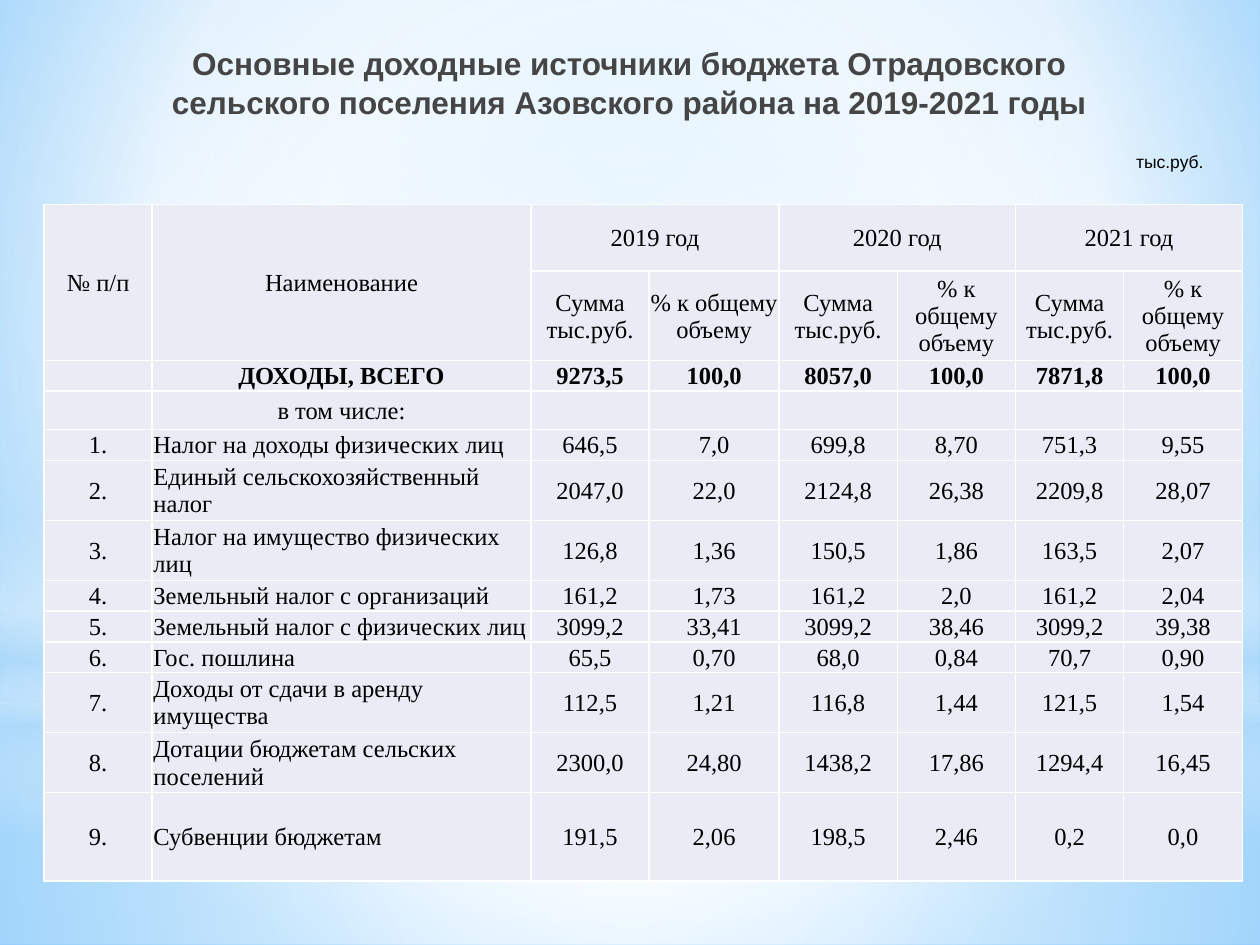
import lxml.etree
import pptx
import pptx.dml.color
import pptx.enum.shapes
import pptx.enum.text
import pptx.oxml
import pptx.oxml.ns
import pptx.util

Pt = pptx.util.Pt
ALIGN = pptx.enum.text.PP_ALIGN
ANCHOR = pptx.enum.text.MSO_ANCHOR
SHAPE = pptx.enum.shapes.MSO_SHAPE
NAMESPACE = pptx.oxml.ns.nsdecls("a")

COLUMN_WIDTHS = [61.8, 216.4, 67.6, 74.2, 67.6, 67.6, 61.8, 67.9]
ROW_HEIGHTS = [38, 50.5, 17.5, 22, 17.5, 34, 34, 17.5, 17.5, 17.5, 34, 34, 50.4]
YEARS = ["2019 год", "2020 год", "2021 год"]
TOTALS = ["", "ДОХОДЫ, ВСЕГО", "9273,5", "100,0", "8057,0", "100,0", "7871,8", "100,0"]
INCOME = [
    ["Налог на доходы физических лиц", "646,5", "7,0", "699,8", "8,70", "751,3", "9,55"],
    ["Единый сельскохозяйственный налог", "2047,0", "22,0", "2124,8", "26,38", "2209,8", "28,07"],
    ["Налог на имущество физических лиц", "126,8", "1,36", "150,5", "1,86", "163,5", "2,07"],
    ["Земельный налог с организаций", "161,2", "1,73", "161,2", "2,0", "161,2", "2,04"],
    ["Земельный налог с физических лиц", "3099,2", "33,41", "3099,2", "38,46", "3099,2", "39,38"],
    ["Гос. пошлина", "65,5", "0,70", "68,0", "0,84", "70,7", "0,90"],
    ["Доходы от сдачи в аренду имущества", "112,5", "1,21", "116,8", "1,44", "121,5", "1,54"],
    ["Дотации бюджетам сельских поселений", "2300,0", "24,80", "1438,2", "17,86", "1294,4", "16,45"],
    ["Субвенции бюджетам", "191,5", "2,06", "198,5", "2,46", "0,2", "0,0"],
]


def color(value):
    return pptx.dml.color.RGBColor.from_string(value)


def write_text(frame, text, font="Arial", size=14, fill="000000", bold=False,
               align=ALIGN.CENTER, spacing=None):
    paragraph = frame.paragraphs[0]
    paragraph.alignment = align
    paragraph.line_spacing = spacing
    if not text:
        paragraph._p.append(pptx.oxml.parse_xml(
            f'<a:endParaRPr {NAMESPACE} sz="{size * 100}"/>'))
        return
    run = paragraph.add_run()
    run.text = text
    run.font.name = font
    run.font.size = Pt(size)
    run.font.bold = bold
    run.font.color.rgb = color(fill)


def gradient(stops, center=None, angle=90):
    items = "".join(
        f'<a:gs pos="{position * 1000}"><a:srgbClr val="{color(value)}">'
        f'<a:alpha val="{opacity * 1000}"/></a:srgbClr></a:gs>'
        for position, value, opacity in stops)
    if center:
        left, top, right, bottom = (edge * 1000 for edge in center)
        direction = (f'<a:path path="circle"><a:fillToRect l="{left}" t="{top}" '
                     f'r="{right}" b="{bottom}"/></a:path>')
    else:
        direction = f'<a:lin ang="{angle * 60000}" scaled="0"/>'
    return pptx.oxml.parse_xml(
        f'<a:gradFill {NAMESPACE} rotWithShape="1"><a:gsLst>{items}</a:gsLst>'
        f'{direction}</a:gradFill>')


def swap_fill(solid, replacement):
    solid.getparent().replace(solid, replacement)


class BudgetSlide:
    font = "Times New Roman"
    cell_fill = "E9EBF5"
    border = "FFFFFF"
    title_color = "454545"

    def __init__(self, presentation):
        self.slide = presentation.slides.add_slide(presentation.slide_layouts[5])

    def background(self, stops, center):
        self.slide.background.fill.solid()
        solid = self.slide.element.xpath("./p:cSld/p:bg/p:bgPr/a:solidFill")[0]
        swap_fill(solid, gradient(stops, center))

    def glow(self, kind, top, height, stops, center=None):
        shape = self.slide.shapes.add_shape(kind, 0, Pt(top), Pt(720), Pt(height))
        shape.shadow.inherit = False
        shape.line.fill.background()
        shape.fill.solid()
        swap_fill(shape.element.xpath("./p:spPr/a:solidFill")[0], gradient(stops, center))

    def title(self, text, left, top, width, height):
        shape = self.slide.shapes.title
        shape.element.getparent().append(shape.element)
        shape.left, shape.top, shape.width, shape.height = map(Pt, (left, top, width, height))
        frame = shape.text_frame
        frame.word_wrap = True
        frame.auto_size = pptx.enum.text.MSO_AUTO_SIZE.NONE
        frame.vertical_anchor = ANCHOR.TOP
        write_text(frame, text, size=18, fill=self.title_color, bold=True, spacing=1.05)

    def label(self, text, left, top, width, height):
        shape = self.slide.shapes.add_textbox(*map(Pt, (left, top, width, height)))
        shape.text_frame.word_wrap = True
        write_text(shape.text_frame, text, size=10, align=ALIGN.RIGHT)

    def table(self, rows, left, top, widths, heights):
        shape = self.slide.shapes.add_table(
            len(rows), len(widths), Pt(left), Pt(top), Pt(sum(widths)), Pt(sum(heights)))
        table = shape.table
        table.first_row = table.horz_banding = False
        for column, width in zip(table.columns, widths):
            column.width = Pt(width)
        for row, height in zip(table.rows, heights):
            row.height = Pt(height)
        for row_index, values in enumerate(rows):
            for column_index, value in enumerate(values):
                align = ALIGN.LEFT if row_index > 3 and column_index == 1 else ALIGN.CENTER
                self.cell(table.cell(row_index, column_index), value, align, row_index == 2)
        for column_index in (0, 1):
            table.cell(0, column_index).merge(table.cell(1, column_index))
        for column_index in range(2, len(widths), 2):
            table.cell(0, column_index).merge(table.cell(0, column_index + 1))

    def cell(self, cell, text, align, bold):
        cell.margin_left = cell.margin_right = cell.margin_top = Pt(0.7)
        cell.margin_bottom = 0
        cell.vertical_anchor = ANCHOR.MIDDLE
        cell.fill.solid()
        cell.fill.fore_color.rgb = color(self.cell_fill)
        write_text(cell.text_frame, text, font=self.font, bold=bold, align=align)
        properties = cell._tc.get_or_add_tcPr()
        for index, side in enumerate("LRTB"):
            properties.insert(index, pptx.oxml.parse_xml(
                f'<a:ln{side} {NAMESPACE} w="{Pt(1)}"><a:solidFill>'
                f'<a:srgbClr val="{color(self.border)}"/></a:solidFill></a:ln{side}>'))


def main():
    presentation = pptx.Presentation()
    presentation.slide_width = Pt(720)
    presentation.slide_height = Pt(540)
    budget = BudgetSlide(presentation)

    middle = (50, 50, 50, 50)
    white, blue = "FFFFFF", "B4DCFA"
    budget.background([(0, "9ED5FF", 100), (60, white, 100), (100, "5BB9FF", 100)],
                      (20, 10, 20, 60))
    budget.glow(SHAPE.RECTANGLE, 401.8, 138.2,
                [(0, white, 91), (37, white, 76), (100, blue, 79)], middle)
    budget.glow(SHAPE.RECTANGLE, 0, 401.8,
                [(0, white, 89), (48, white, 62), (100, blue, 79)], middle)
    budget.glow(SHAPE.RECTANGLE, 296.6, 180,
                [(0, white, 0), (29, white, 30), (45, blue, 40),
                 (55, white, 26), (65, blue, 60), (100, white, 0)])
    budget.glow(SHAPE.OVAL, 126, 401.8, [(0, white, 100), (56, white, 0)], middle)

    budget.title("Основные доходные источники бюджета Отрадовского сельского поселения "
                 "Азовского района на 2019-2021 годы", 87.1, 20.2, 545, 90)
    budget.label("тыс.руб.", 570.2, 82.8, 124.6, 19.4)

    header = ["№ п/п", "Наименование"]
    for year in YEARS:
        header += [year, ""]
    measures = ["", ""] + ["Сумма тыс.руб.", "% к общему объему"] * len(YEARS)
    including = ["", "в том числе:"] + [""] * 2 * len(YEARS)
    numbered = [[f"{number}.", *values] for number, values in enumerate(INCOME, 1)]
    budget.table([header, measures, TOTALS, including, *numbered],
                 25.2, 116.9, COLUMN_WIDTHS, ROW_HEIGHTS)

    presentation.save("out.pptx")


if __name__ == "__main__":
    main()
